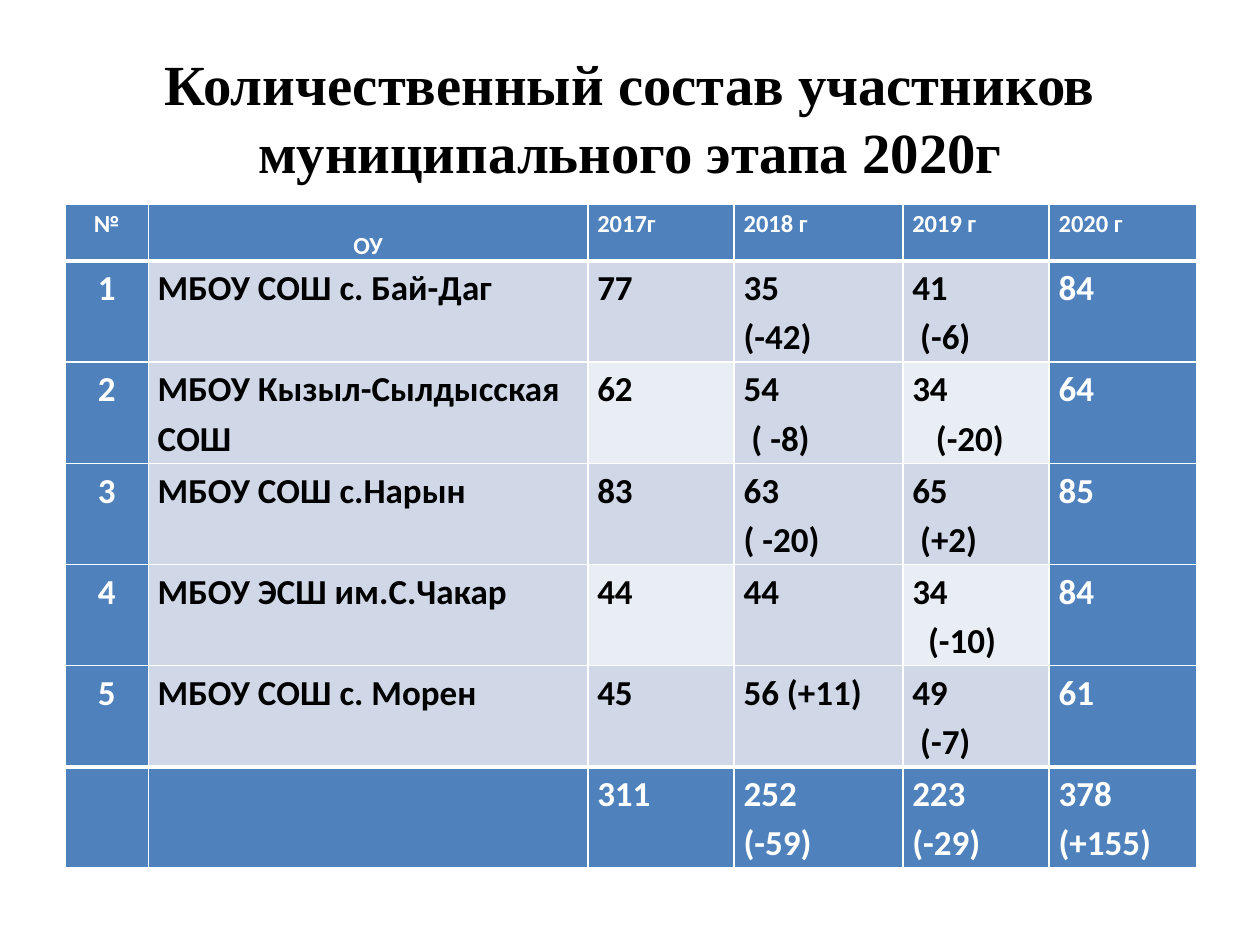
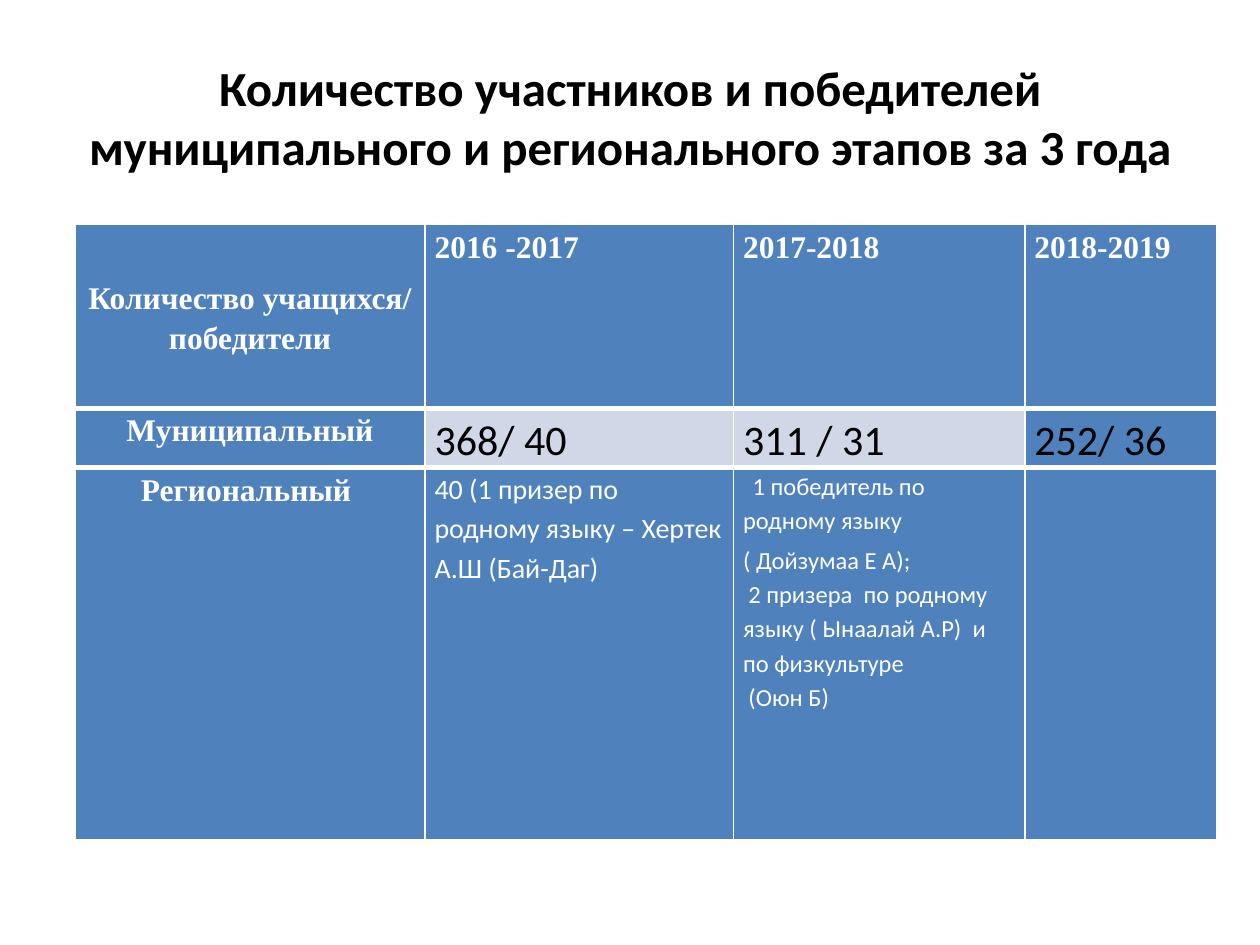
import pptx
import pptx.util
import pptx.dml.color
import pptx.enum.text
import pptx.oxml.ns
from lxml import etree

Cm, Pt = pptx.util.Cm, pptx.util.Pt
ALIGN = pptx.enum.text.PP_ALIGN
ANCHOR = pptx.enum.text.MSO_ANCHOR

COLOURS = {
    "ink": "000000",
    "white": "FFFFFF",
    "accent": "4F81BD",
    "band": "D0D8E8",
    "pale_band": "E9EDF4",
}
SANS, SERIF = "Calibri", "Times New Roman"


def colour(name):
    return pptx.dml.color.RGBColor.from_string(COLOURS[name])


def write(paragraph, text, *, size, font=SANS, bold=True, ink="ink",
          align=ALIGN.LEFT, spacing=None, indent=0):
    """Add a formatted run; indent moves the first line, in points."""
    paragraph.alignment = align
    if spacing:
        paragraph.line_spacing = spacing
    if indent:
        paragraph._p.get_or_add_pPr().set("indent", str(Pt(indent)))
    run = paragraph.add_run()
    run.text = text
    run.font.size = Pt(size)
    run.font.name = font
    run.font.bold = bold
    run.font.color.rgb = colour(ink)


class Deck:
    def __init__(self):
        self.file = pptx.Presentation()
        self.file.slide_width, self.file.slide_height = Cm(25.4), Cm(19.05)
        self.slide = None

    def titled_slide(self, heading, **style):
        self.slide = self.file.slides.add_slide(self.file.slide_layouts[5])
        title = self.slide.shapes.title
        title.left, title.top = Cm(1.27), Cm(0.76)
        title.width, title.height = Cm(22.86), Cm(3.18)
        frame = title.text_frame
        frame.word_wrap = True
        frame.auto_size = pptx.enum.text.MSO_AUTO_SIZE.NONE
        frame.vertical_anchor = ANCHOR.MIDDLE
        write(frame.paragraphs[0], heading, align=ALIGN.CENTER, **style)

    def table(self, left, top, widths, heights, contents, style_of):
        """style_of(row, column) gives text format and anchor of a cell."""
        grid = self.slide.shapes.add_table(
            len(heights), len(widths), Cm(left), Cm(top),
            Cm(sum(widths)), Cm(sum(heights))).table
        grid.first_row = grid.horz_banding = False
        for column, width in zip(grid.columns, widths):
            column.width = Cm(width)
        for row, height in zip(grid.rows, heights):
            row.height = Cm(height)

        last_row, last_column = len(heights) - 1, len(widths) - 1
        for r, row_contents in enumerate(contents):
            for c, content in enumerate(row_contents):
                cell = grid.cell(r, c)
                framed = r in (0, last_row) or c in (0, last_column)
                # Thick rules under the header and above the last row
                self.borders(cell, top=3 if r in (1, last_row) else 1,
                             bottom=3 if r in (0, last_row - 1) else 1)
                banded = "pale_band" if r % 2 == c % 2 == 0 else "band"
                cell.fill.solid()
                cell.fill.fore_color.rgb = colour("accent" if framed else banded)
                style = {"ink": "white" if framed else "ink", "spacing": 1.15,
                         "align": ALIGN.LEFT if c else ALIGN.CENTER}
                style.update(style_of(r, c))
                self.cell_text(cell, content, **style)

    def borders(self, cell, top, bottom):
        properties = cell._tc.get_or_add_tcPr()
        qn = pptx.oxml.ns.qn
        for side, width in (("L", 1), ("R", 1), ("T", top), ("B", bottom)):
            line = etree.SubElement(properties, qn(f"a:ln{side}"), w=str(Pt(width)))
            fill = etree.SubElement(line, qn("a:solidFill"))
            etree.SubElement(fill, qn("a:srgbClr"), val=COLOURS["white"])

    def cell_text(self, cell, content, anchor=ANCHOR.TOP, **style):
        """Each line is a text or a (text, indent) pair."""
        cell.margin_left = cell.margin_right = Cm(0.19)
        cell.margin_top = cell.margin_bottom = 0
        cell.vertical_anchor = anchor
        frame = cell.text_frame
        lines = content if isinstance(content, list) else [content]
        for number, line in enumerate(lines):
            text, indent = line if isinstance(line, tuple) else (line, 0)
            if text:
                paragraph = frame.add_paragraph() if number else frame.paragraphs[0]
                write(paragraph, text, indent=indent, **style)
        return frame


def participants_style(row, column):
    style = {"size": 20 if row else 14}
    if (row, column) == (0, 1):
        style.update(anchor=ANCHOR.BOTTOM, align=ALIGN.CENTER)
    return style


def winners_style(row, column):
    if row == 0 or column == 0:
        middle = (row, column) == (0, 0)
        return {"size": 18, "font": SERIF,
                "anchor": ANCHOR.MIDDLE if middle else ANCHOR.TOP}
    if row == 1:
        return {"size": 24, "bold": False, "ink": "ink"}
    return {"size": 16 if column == 1 else 14, "bold": False}


def main():
    deck = Deck()

    # Participants by school
    deck.titled_slide("Количественный состав участников муниципального этапа 2020г",
                      size=32.4, font=SERIF)
    participants = [
        ["№", "ОУ", "2017г", "2018 г", "2019 г", "2020 г"],
        ["1", "МБОУ СОШ с. Бай-Даг", "77", ["35", "(-42)"], ["41", ("(-6)", 4.5)], "84"],
        ["2", "МБОУ Кызыл-Сылдысская СОШ", "62", ["54", ("( -8)", 4.5)],
         ["34", ("(-20)", 13.5)], "64"],
        ["3", "МБОУ СОШ с.Нарын", "83", ["63", "( -20)"], ["65", ("(+2)", 4.5)], "85"],
        ["4", "МБОУ ЭСШ им.С.Чакар", "44", "44", ["34", ("(-10)", 9)], "84"],
        ["5", "МБОУ СОШ с. Морен", "45", "56 (+11)", ["49", ("(-7)", 4.5)], "61"],
        ["", "", "311", ["252", "(-59)"], ["223", "(-29)"], ["378", "(+155)"]],
    ]
    deck.table(1.31, 4.12, [1.68, 8.86, 2.95, 3.4, 2.95, 2.97],
               [1.14] + [2.04] * 6, participants, participants_style)

    # Participants and winners over three years
    deck.titled_slide("Количество участников и победителей муниципального "
                      "и регионального этапов за 3 года", size=28)
    regional_winners = [
        ("1 победитель по родному языку", 5.5),
        "( Дойзумаа Е А);",
        ("2 призера  по родному языку ( Ынаалай А.Р)  и по физкультуре", 3),
        ("(Оюн Б)", 3),
    ]
    winners = [
        ["Количество учащихся/ победители", "2016 -2017", "2017-2018", "2018-2019"],
        ["Муниципальный", "368/ 40", "311 / 31", "252/ 36"],
        ["Региональный ", "40 (1 призер по родному языку – Хертек А.Ш (Бай-Даг)",
         regional_winners, ""],
    ]
    deck.table(1.51, 4.53, [7.06, 6.22, 5.87, 3.86], [3.7, 1.2, 7.49],
               winners, winners_style)
    # Lower the first line of the regional winners
    winners_grid = deck.slide.shapes[-1].table
    first_line = winners_grid.cell(2, 2).text_frame.paragraphs[0]
    first_line.space_before, first_line.space_after = Pt(11), Pt(3)

    deck.file.save("out.pptx")


if __name__ == "__main__":
    main()
